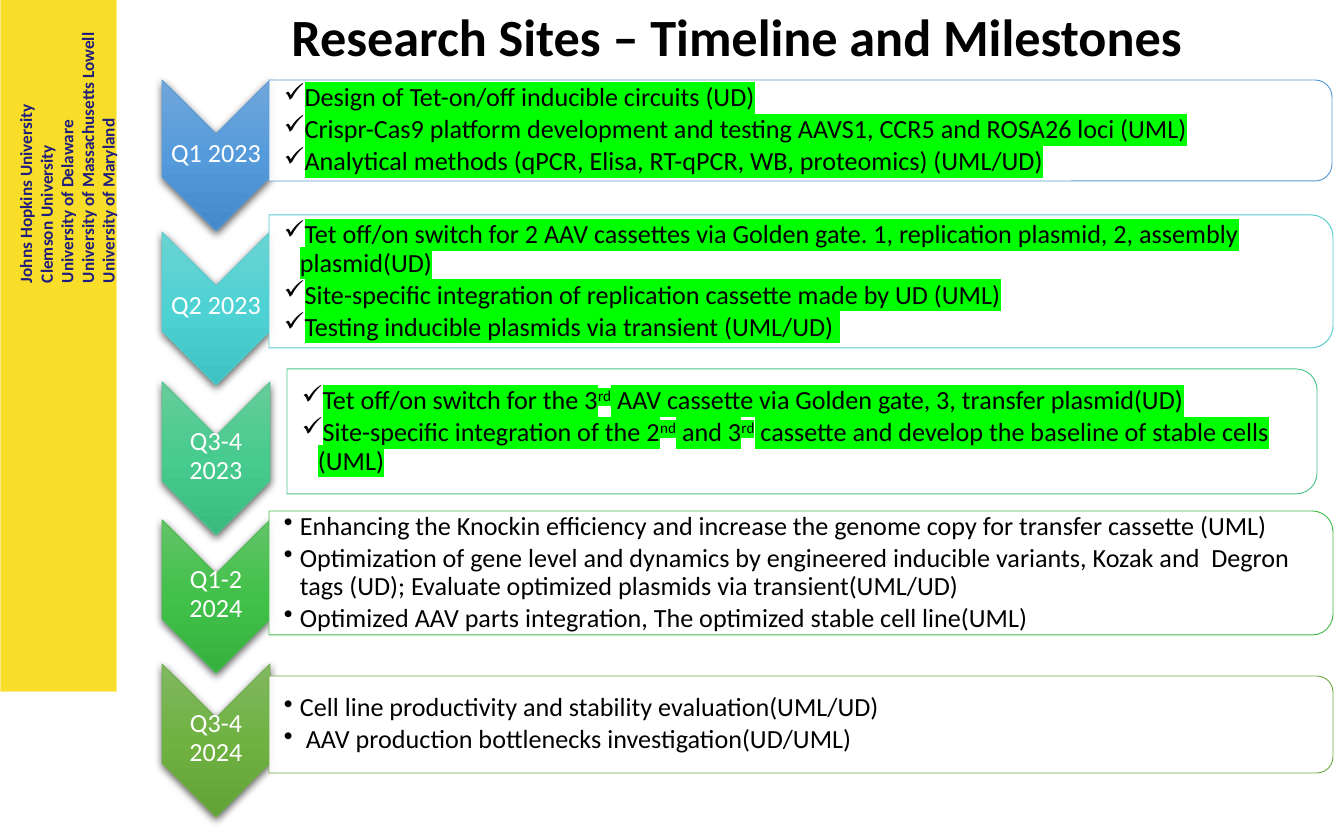
from dataclasses import dataclass

import lxml.etree
import pptx
import pptx.dml.color
import pptx.enum.shapes
import pptx.enum.text
import pptx.oxml
import pptx.oxml.ns
import pptx.util

SCALE = 914400 / 134.4
SHAPES = pptx.enum.shapes.MSO_SHAPE
ALIGN = pptx.enum.text.PP_ALIGN
ANCHOR = pptx.enum.text.MSO_ANCHOR


@dataclass(frozen=True)
class Theme:
    """Colours, font and type sizes of the slide."""
    font: str = "Calibri"
    title_size: float = 28
    body_size: float = 14
    site_size: float = 9.2
    ink: str = "000000"
    paper: str = "FFFFFF"
    marker: str = "00FF00"
    sidebar: str = "F8DE28"
    sidebar_edge: str = "FBEC85"
    navy: str = "211D7D"


THEME = Theme()
CHEVRON_LEFT, CHEVRON_WIDTH = 162, 108
LABEL_DROP, LABEL_HEIGHT = 52, 45
PANEL_MARGIN = 5

SITES = [
    "Johns Hopkins University",
    "Clemson University",
    "University of Delaware",
    "University of Massachusetts Lowell",
    "University of Maryland",
]

# Superscripts stand between carets.
MILESTONES = [
    dict(period="Q1 2023", chevron=(80, 151), panel=(269, 80, 1063, 101), done=True,
         edge="5B9BD5", shades=("71A6DB", "559BDB", "448ACA"), tasks=[
             "Design of Tet-on/off inducible circuits (UD)",
             "Crispr-Cas9 platform development and testing AAVS1, CCR5 and ROSA26 loci (UML)",
             "Analytical methods (qPCR, Elisa, RT-qPCR, WB, proteomics) (UML/UD)"]),
    dict(period="Q2 2023", chevron=(232, 153), panel=(269, 215, 1064, 133), done=True,
         edge="54CCCD", shades=("6CD3D3", "4ED2D3", "3EC2C3"), tasks=[
             "Tet off/on switch for 2 AAV cassettes via Golden gate. 1, replication plasmid, "
             "2, assembly plasmid(UD)",
             "Site-specific integration of replication cassette made by UD (UML)",
             "Testing inducible plasmids via transient (UML/UD) "]),
    dict(period="Q3-4 2023", chevron=(382, 153), panel=(287, 369, 1030, 125), done=True,
         edge="4DC58D", shades=("67CC9A", "47CB8E", "39BB7F"), tasks=[
             "Tet off/on switch for the 3^rd^ AAV cassette via Golden gate, 3, transfer plasmid(UD)",
             "Site-specific integration of the 2^nd^ and 3^rd^ cassette and develop the baseline "
             "of stable cells (UML)"]),
    dict(period="Q1-2 2024", chevron=(520, 153), panel=(269, 511, 1064, 124), done=False,
         edge="48BB4F", shades=("63C368", "42C14A", "34B23D"), tasks=[
             "Enhancing the Knockin efficiency and increase the genome copy for transfer "
             "cassette (UML)",
             "Optimization of gene level and dynamics by engineered inducible variants, Kozak "
             "and  Degron tags (UD); Evaluate optimized plasmids via transient(UML/UD)",
             "Optimized AAV parts integration, The optimized stable cell line(UML)"]),
    dict(period="Q3-4 2024", chevron=(664, 153), panel=(269, 676, 1064, 97), done=False,
         edge="70AD47", shades=("81B861", "6FB242", "62A336"), tasks=[
             "Cell line productivity and stability evaluation(UML/UD)",
             " AAV production bottlenecks investigation(UD/UML)"]),
]


def px(length):
    """Turn px into EMU."""
    return pptx.util.Emu(round(length * SCALE))


def rgb(colour):
    """Turn a hex string into a colour."""
    return pptx.dml.color.RGBColor.from_string(colour)


def turned(box):
    """Give the frame that covers the box once turned by a quarter."""
    left, top, width, height = box
    shift = (width - height) / 2
    return left + shift, top - shift, height, width


def add_child(parent, tag, **attributes):
    """Append a drawing element to its parent."""
    return lxml.etree.SubElement(parent, pptx.oxml.ns.qn(tag), attributes)


def add_outline(slide, preset, box, edge, rotation=0):
    """Add a flat preset shape with a thin line."""
    frame = turned(box) if rotation else box
    outline = slide.shapes.add_shape(preset, *map(px, frame))
    outline.rotation = rotation
    outline.shadow.inherit = False
    outline.line.color.rgb = rgb(edge)
    outline.line.width = pptx.util.Pt(0.5)
    return outline


def add_run(paragraph, text, size, colour, bold, highlight, raised):
    """Add one formatted run."""
    run = paragraph.add_run()
    run.text = text
    run.font.size = pptx.util.Pt(size)
    run.font.bold = bold
    run.font.color.rgb = rgb(colour)
    run.font.name = THEME.font
    properties = run.font._element
    if highlight:
        mark = add_child(properties, "a:highlight")
        add_child(mark, "a:srgbClr", val=highlight)
        properties.find(pptx.oxml.ns.qn("a:latin")).addprevious(mark)
    if raised:
        properties.set("baseline", "30000")


def add_text(slide, lines, box, *, size=THEME.body_size, colour=THEME.ink, bold=False,
             align=ALIGN.LEFT, anchor=ANCHOR.TOP, insets=(13, 7, 13, 7), spacing=None,
             after=0, bullet=None, highlight=None, rotation=0, wrap=True):
    """Add a text box with one paragraph for each line."""
    holder = slide.shapes.add_textbox(*map(px, turned(box) if rotation else box))
    holder.rotation = rotation
    frame = holder.text_frame
    frame.word_wrap = wrap
    frame.vertical_anchor = anchor
    (frame.margin_left, frame.margin_top,
     frame.margin_right, frame.margin_bottom) = map(px, insets)
    for index, line in enumerate(lines):
        paragraph = frame.add_paragraph() if index else frame.paragraphs[0]
        paragraph.alignment = align
        paragraph.line_spacing = spacing
        paragraph.space_after = pptx.util.Pt(after)
        if bullet:
            properties = paragraph._p.get_or_add_pPr()
            properties.set("marL", str(px(16)))
            properties.set("indent", str(px(-16)))
            add_child(properties, "a:buChar", char=bullet)
        for part, text in enumerate(line.split("^")):
            add_run(paragraph, text, size, colour, bold, highlight, part % 2)
    return holder


def add_chevron(slide, top, height, edge, shades):
    """Add a shaded chevron that points down."""
    chevron = add_outline(slide, SHAPES.CHEVRON, (CHEVRON_LEFT, top, CHEVRON_WIDTH, height),
                          edge, rotation=90)
    properties = chevron._element.spPr
    gradient = add_child(properties, "a:gradFill", rotWithShape="0")
    stops = add_child(gradient, "a:gsLst")
    for position, shade in zip((0, 50000, 100000), shades):
        add_child(add_child(stops, "a:gs", pos=str(position)), "a:srgbClr", val=shade)
    add_child(gradient, "a:lin", ang="5400000", scaled="0")
    properties.find(pptx.oxml.ns.qn("a:prstGeom")).addnext(gradient)
    effects = properties.find(pptx.oxml.ns.qn("a:effectLst"))
    shadow = add_child(effects, "a:outerShdw", blurRad="57150", dist="19050",
                       dir="5400000", algn="ctr", rotWithShape="0")
    add_child(add_child(shadow, "a:srgbClr", val=THEME.ink), "a:alpha", val="63000")


def add_panel(slide, box, edge):
    """Add a pale panel with rounded right corners."""
    panel = add_outline(slide, SHAPES.ROUND_2_SAME_RECTANGLE, box, edge, rotation=90)
    panel.fill.solid()
    panel.fill.fore_color.rgb = rgb(THEME.paper)
    colour = panel._element.spPr.find(pptx.oxml.ns.qn("a:solidFill"))[0]
    add_child(colour, "a:alpha", val="90000")


def add_milestone(slide, period, chevron, panel, done, edge, shades, tasks):
    """Add a period with its list of tasks."""
    add_chevron(slide, *chevron, edge, shades)
    label_box = (CHEVRON_LEFT, chevron[0] + LABEL_DROP, CHEVRON_WIDTH, LABEL_HEIGHT)
    add_text(slide, [period], label_box, colour=THEME.paper, align=ALIGN.CENTER,
             anchor=ANCHOR.MIDDLE, insets=(1, 1, 1, 1), spacing=0.9, after=5)
    add_panel(slide, panel, edge)
    left, top, width, height = panel
    task_box = (left, top + PANEL_MARGIN, width - PANEL_MARGIN, height - 2 * PANEL_MARGIN)
    add_text(slide, tasks, task_box, anchor=ANCHOR.MIDDLE, insets=(15, 1, 1, 1),
             spacing=0.9, after=2, bullet="✓" if done else "•",
             highlight=THEME.marker if done else None)


def add_sidebar(slide):
    """Add the band that lists the research sites."""
    band = add_outline(slide, SHAPES.RECTANGLE, (0, 0, 117, 692), THEME.sidebar_edge)
    band.fill.solid()
    band.fill.fore_color.rgb = rgb(THEME.sidebar)
    add_text(slide, SITES, (8, 16, 102, 280), size=THEME.site_size, colour=THEME.navy,
             bold=True, rotation=270, wrap=False)


def main():
    """Build and save the slide."""
    deck = pptx.Presentation()
    deck.slide_width, deck.slide_height = px(1344), px(840)
    slide = deck.slides.add_slide(deck.slide_layouts[6])
    add_sidebar(slide)
    for milestone in MILESTONES:
        add_milestone(slide, **milestone)
    add_text(slide, ["Research Sites – Timeline and Milestones"], (207, -3, 1059, 77),
             size=THEME.title_size, bold=True, align=ALIGN.CENTER)
    deck.save("out.pptx")


if __name__ == "__main__":
    main()
